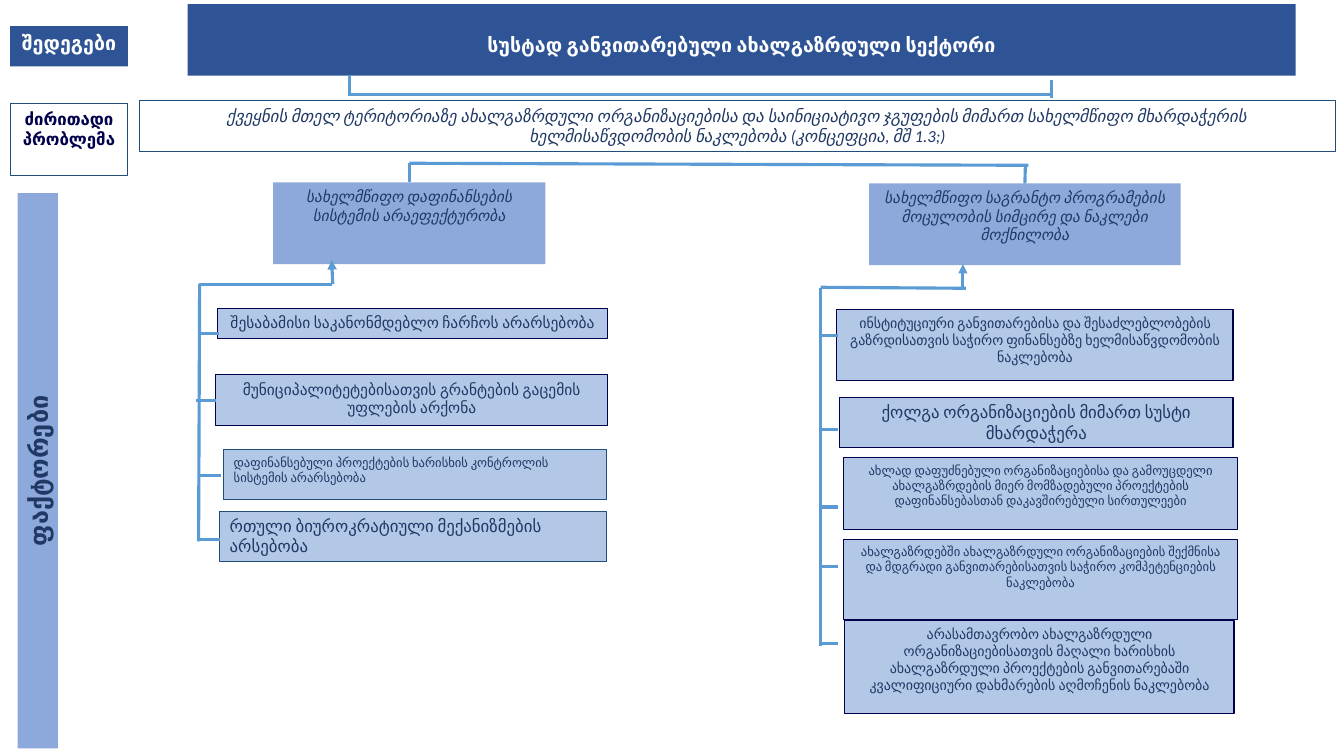
from pptx import Presentation
from pptx.dml.color import RGBColor
from pptx.enum.shapes import MSO_CONNECTOR as Connector, MSO_SHAPE as Shape
from pptx.enum.text import MSO_ANCHOR as Anchor, PP_ALIGN as Align
from pptx.oxml.ns import qn
from pptx.util import Pt
from lxml import etree

PX = 9144  # 100 px to the inch
WHITE = RGBColor(0xFF, 0xFF, 0xFF)
DARK_BLUE = RGBColor(0x2F, 0x54, 0x96)
MID_BLUE = RGBColor(0x8D, 0xA9, 0xDB)
PALE_BLUE = RGBColor(0xB3, 0xC7, 0xE7)
LINE_BLUE = RGBColor(0x5B, 0x9B, 0xD5)
EDGE_BLUE = RGBColor(0x1E, 0x4E, 0x79)
NAVY = RGBColor(0x00, 0x00, 0x4C)
INK = RGBColor(0x1F, 0x38, 0x64)
TOP, LEFT = 0, 1  # connection sites of a rectangle


class ProblemTree:
    font = "Calibri"

    def __init__(self, slide):
        self.slide = slide

    def box(self, bounds, text, size, fill=None, edge=None, color=INK, bold=False,
            italic=False, align=Align.CENTER, inset_top=5, rotation=0):
        shape = self.slide.shapes.add_shape(Shape.RECTANGLE, *(n * PX for n in bounds))
        shape.shadow.inherit = False
        shape.rotation = rotation
        if fill is None:
            shape.fill.background()
        else:
            shape.fill.solid()
            shape.fill.fore_color.rgb = fill
        if edge is None:
            shape.line.fill.background()
        else:
            shape.line.color.rgb = edge
            shape.line.width = Pt(0.75)
        frame = shape.text_frame
        frame.text = text
        frame.word_wrap = True
        frame.vertical_anchor = Anchor.TOP
        frame.margin_left = frame.margin_right = 10 * PX
        frame.margin_top, frame.margin_bottom = inset_top * PX, 5 * PX
        paragraph = frame.paragraphs[0]
        paragraph.alignment = align
        for run in paragraph.runs:
            run.font.name = self.font
            run.font.size = Pt(size)
            run.font.bold, run.font.italic = bold, italic
            run.font.color.rgb = color
        return shape

    def line(self, x1, y1, x2, y2, arrow=False, target=None, site=LEFT):
        connector = self.slide.shapes.add_connector(
            Connector.STRAIGHT, x1 * PX, y1 * PX, x2 * PX, y2 * PX)
        connector.line.color.rgb = LINE_BLUE
        connector.line.width = Pt(2.25)
        if arrow:
            etree.SubElement(connector.line._get_or_add_ln(), qn("a:tailEnd"), type="triangle")
        etree.SubElement(connector._element.spPr, qn("a:effectLst"))
        if target is not None:
            connector.end_connect(target, site)


def main():
    presentation = Presentation()
    presentation.slide_width, presentation.slide_height = 1333 * PX, 750 * PX
    tree = ProblemTree(presentation.slides.add_slide(presentation.slide_layouts[6]))

    # Row labels
    tree.box((10, 26, 117, 40), "შედეგები", 14, DARK_BLUE, color=WHITE, bold=True)
    tree.box((10, 103, 117, 71), "ძირითადი პრობლემა", 12, edge=EDGE_BLUE, color=NAVY, bold=True)
    tree.box((-238, 447, 551, 40), "ფაქტორები", 18, MID_BLUE, bold=True, rotation=270)

    # Result and core problem
    tree.box((186, 4, 1099, 71), "სუსტად განვითარებული ახალგაზრდული სექტორი", 14,
             DARK_BLUE, color=WHITE, bold=True, inset_top=29)
    tree.box((138, 100, 1187, 50),
             "ქვეყნის მთელ ტერიტორიაზე ახალგაზრდული ორგანიზაციებისა და საინიციატივო ჯგუფების "
             "მიმართ სახელმწიფო მხარდაჭერის ხელმისაწვდომობის ნაკლებობა (კონცეფცია, მშ 1.3;)",
             12, edge=EDGE_BLUE, italic=True)
    tree.line(348, 94, 1043, 94)
    tree.line(347, 74, 347, 95)
    tree.line(1043, 79, 1043, 97)

    # Two main causes
    funding = tree.box((271, 181, 270, 81), "სახელმწიფო დაფინანსების სისტემის არაეფექტურობა",
                       11, MID_BLUE, italic=True)
    grants = tree.box((862, 182, 309, 81),
                      "სახელმწიფო საგრანტო პროგრამების მოცულობის სიმცირე და ნაკლები მოქნილობა",
                      11, MID_BLUE, italic=True)
    tree.line(406, 162, 1020, 164)
    tree.line(406, 162, 406, 181, target=funding, site=TOP)
    tree.line(1017, 165, 1017, 182, target=grants, site=TOP)

    # Factors: bounds, text size, edge, alignment, text
    factors = [
        ((216, 306, 387, 30), 11, NAVY, Align.CENTER,
         "შესაბამისი საკანონმდებლო ჩარჩოს არარსებობა"),
        ((214, 372, 389, 50), 11, NAVY, Align.CENTER,
         "მუნიციპალიტეტებისათვის გრანტების გაცემის უფლების არქონა"),
        ((222, 446, 380, 50), 9, EDGE_BLUE, Align.LEFT,
         "დაფინანსებული პროექტების ხარისხის კონტროლის სისტემის არარსებობა"),
        ((218, 507, 384, 50), 12, EDGE_BLUE, Align.LEFT,
         "რთული ბიუროკრატიული მექანიზმების არსებობა"),
        ((830, 307, 393, 71), 10, NAVY, Align.CENTER,
         "ინსტიტუციური განვითარებისა და შესაძლებლობების გაზრდისათვის საჭირო ფინანსებზე "
         "ხელმისაწვდომობის ნაკლებობა"),
        ((833, 394, 390, 50), 12, NAVY, Align.CENTER,
         "ქოლგა ორგანიზაციების მიმართ სუსტი მხარდაჭერა"),
        ((837, 454, 390, 71), 9, NAVY, Align.CENTER,
         "ახლად დაფუძნებული ორგანიზაციებისა და გამოუცდელი ახალგაზრდების მიერ მომზადებული "
         "პროექტების დაფინანსებასთან დაკავშირებული სირთულეები"),
        ((837, 535, 390, 80), 9, NAVY, Align.CENTER,
         "ახალგაზრდებში ახალგაზრდული ორგანიზაციების შექმნისა და მდგრადი განვითარებისათვის "
         "საჭირო კომპეტენციების ნაკლებობა"),
        ((838, 616, 386, 92), 10, NAVY, Align.CENTER,
         "არასამთავრობო ახალგაზრდული ორგანიზაციებისათვის მაღალი ხარისხის ახალგაზრდული "
         "პროექტების განვითარებაში კვალიფიციური დახმარების აღმოჩენის ნაკლებობა"),
    ]
    boxes = [tree.box(bounds, text, size, PALE_BLUE, edge, align=align)
             for bounds, size, edge, align, text in factors]

    # Left bracket
    tree.line(329, 282, 197, 282)
    tree.line(330, 282, 329, 258, arrow=True)
    tree.line(198, 282, 197, 537)
    tree.line(197, 331, 217, 331)
    tree.line(194, 397, 214, 397, target=boxes[1])
    tree.line(198, 472, 219, 472)
    tree.line(197, 535, 218, 535)

    # Right bracket
    tree.line(958, 286, 814, 285)
    tree.line(955, 285, 955, 262, arrow=True)
    tree.line(814, 286, 814, 641)
    for y in (333, 426, 503, 562, 638):
        tree.line(814, y, 831, y)

    presentation.save("out.pptx")


if __name__ == "__main__":
    main()
